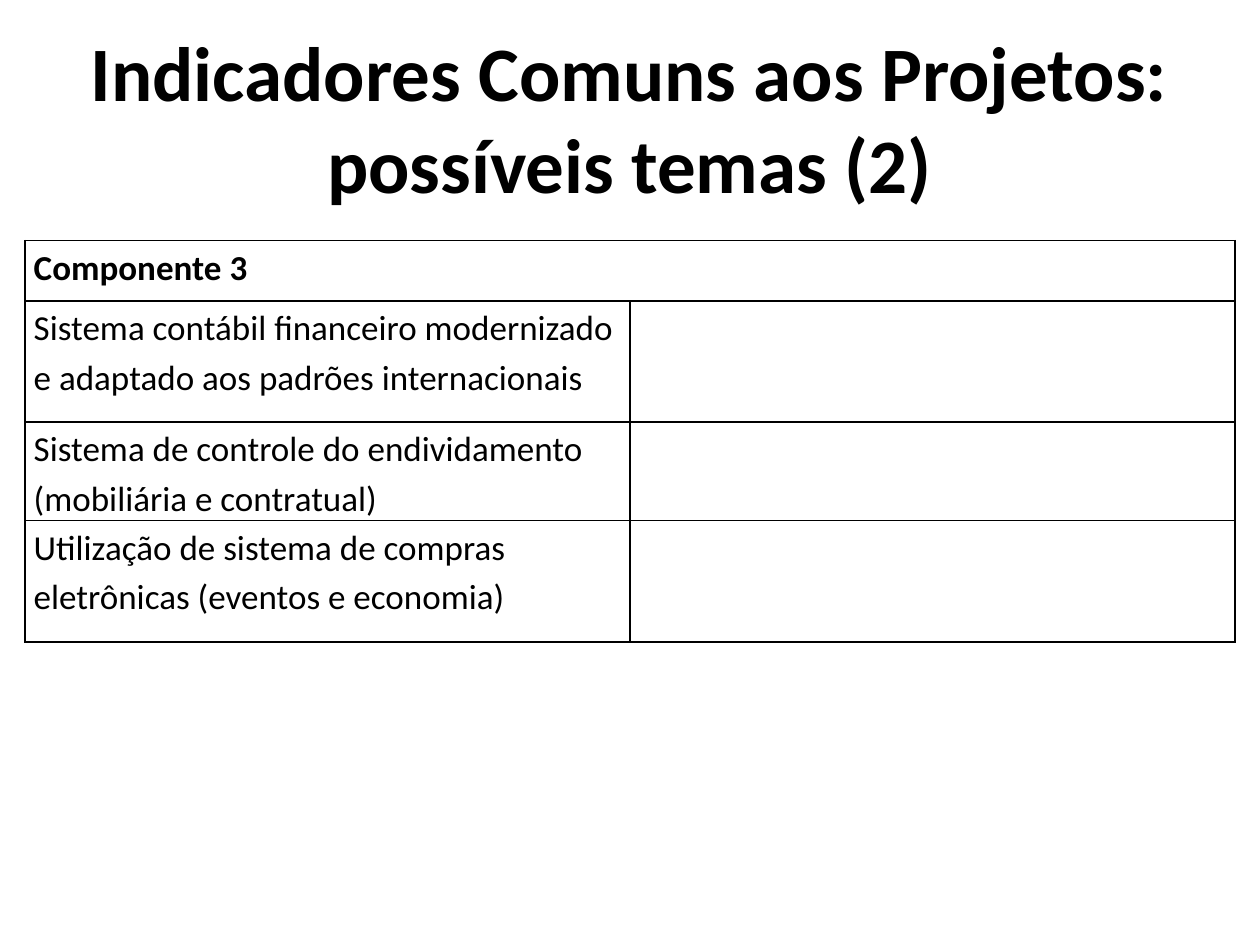
from lxml import etree
from pptx import Presentation
from pptx.dml.color import RGBColor
from pptx.enum.text import MSO_ANCHOR, MSO_AUTO_SIZE, PP_ALIGN
from pptx.oxml.ns import qn
from pptx.util import Cm, Pt

CENTER, LEFT = PP_ALIGN.CENTER, PP_ALIGN.LEFT
MIDDLE = MSO_ANCHOR.MIDDLE
NO_AUTOFIT = MSO_AUTO_SIZE.NONE

FONT = "Calibri"
COLORS = {"text": "000000", "border": "000000"}
TITLE_ONLY = 5

TITLE = "Indicadores Comuns aos Projetos: possíveis temas (2)"
HEADING = "Componente 3"
THEMES = [
    "Sistema contábil financeiro modernizado e adaptado aos padrões internacionais",
    "Sistema de controle do endividamento (mobiliária e contratual)",
    "Utilização de sistema de compras eletrônicas (eventos e economia)",
]
COLUMN_WIDTH = 12.2
ROW_HEIGHTS = [1.22, 2.44, 1.22, 2.44]


def write_text(frame, text, size=20, bold=False, align=LEFT, spacing=None):
    para = frame.paragraphs[0]
    para.alignment = align
    para.line_spacing = spacing
    span = para.add_run()
    span.text = text
    span.font.name = FONT
    span.font.size = Pt(size)
    span.font.bold = bold
    span.font.color.rgb = RGBColor.from_string(COLORS["text"])


def add_title(slide):
    title = slide.shapes.title
    title.left, title.top = Cm(0), Cm(0.76)
    title.width, title.height = Cm(25.4), Cm(3.18)
    frame = title.text_frame
    frame.auto_size = NO_AUTOFIT
    frame.word_wrap = True
    frame.vertical_anchor = MIDDLE
    write_text(frame, TITLE, size=44, bold=True, align=CENTER)


def format_cell(cell):
    """Give the cell thin borders on all sides, no fill and tight margins."""
    cell.margin_left = cell.margin_right = Cm(0.18)
    cell.margin_top = cell.margin_bottom = Cm(0)
    properties = cell._tc.get_or_add_tcPr()
    for side in ("a:lnL", "a:lnR", "a:lnT", "a:lnB"):
        line = etree.SubElement(properties, qn(side), w=str(Pt(1)))
        fill = etree.SubElement(line, qn("a:solidFill"))
        etree.SubElement(fill, qn("a:srgbClr"), val=COLORS["border"])
    cell.fill.background()


def add_theme_table(slide):
    table = slide.shapes.add_table(
        len(ROW_HEIGHTS), 2, Cm(0.5), Cm(4.85),
        Cm(2 * COLUMN_WIDTH), Cm(sum(ROW_HEIGHTS))).table
    table.first_row = table.horz_banding = False
    for column in table.columns:
        column.width = Cm(COLUMN_WIDTH)
    for row, height in zip(table.rows, ROW_HEIGHTS):
        row.height = Cm(height)
        for cell in row.cells:
            format_cell(cell)
    table.cell(0, 0).merge(table.cell(0, 1))
    for index, text in enumerate([HEADING, *THEMES]):
        write_text(table.cell(index, 0).text_frame, text,
                   bold=index == 0, spacing=1.15)


def main():
    deck = Presentation()
    deck.slide_width, deck.slide_height = Cm(25.4), Cm(19.05)
    slide = deck.slides.add_slide(deck.slide_layouts[TITLE_ONLY])
    add_title(slide)
    add_theme_table(slide)
    deck.save("out.pptx")


if __name__ == "__main__":
    main()
